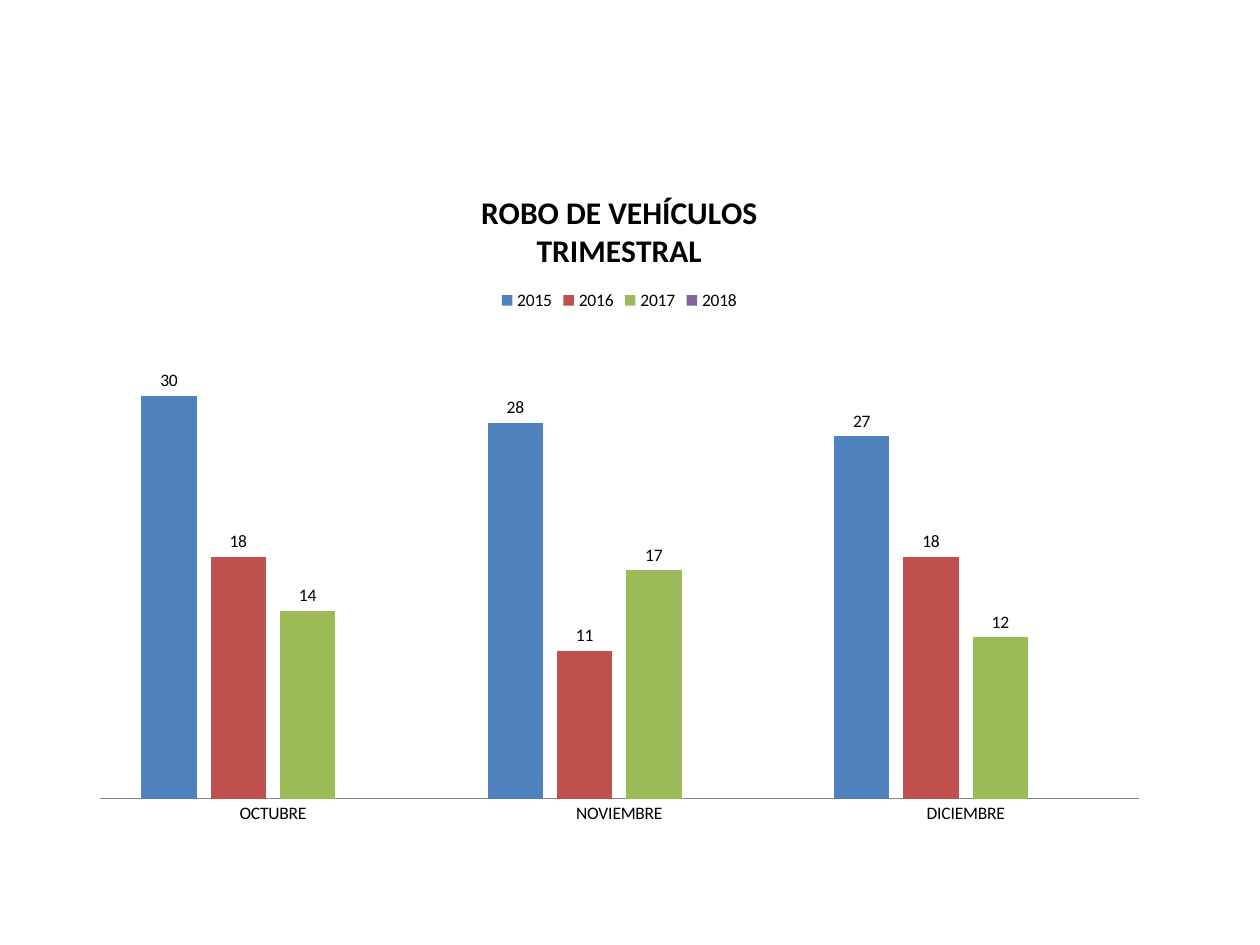
from pptx import Presentation
from pptx.chart.data import CategoryChartData
from pptx.dml.color import RGBColor
from pptx.enum.chart import XL_CHART_TYPE as ChartType, XL_LABEL_POSITION as LabelPosition
from pptx.enum.chart import XL_LEGEND_POSITION as LegendPosition, XL_TICK_MARK as TickMark
from pptx.util import Inches, Pt


def paint(color_format, color):
    color_format.rgb = RGBColor.from_string(color)


MONTHS = ["OCTUBRE", "NOVIEMBRE", "DICIEMBRE"]
THEFTS = {
    "2015": ([30, 28, 27], "4F81BD"),
    "2016": ([18, 11, 18], "C0504D"),
    "2017": ([14, 17, 12], "9BBB59"),
    "2018": ([None] * 3, "8064A2"),
}
TITLE = ["ROBO DE VEHÍCULOS", "TRIMESTRAL"]

deck = Presentation()
deck.slide_width, deck.slide_height = Inches(10), Inches(7.5)
page = deck.slides.add_slide(deck.slide_layouts[6])

data = CategoryChartData()
data.categories = MONTHS
for year, (values, _) in THEFTS.items():
    data.add_series(year, values)
chart = page.shapes.add_chart(
    ChartType.COLUMN_CLUSTERED,
    Inches(0.62), Inches(1.33), Inches(8.59), Inches(5.31), data,
).chart
chart.font.name = "Calibri"
chart.font.size = Pt(10)
paint(chart.font.color, "000000")

# Title and legend
chart.has_title = True
title = chart.chart_title.text_frame
title.text = "\n".join(TITLE)
for para in title.paragraphs:
    para.font.name = "Calibri"
    para.font.size = Pt(18)
    para.font.bold = True
    paint(para.font.color, "000000")
chart.chart_title.include_in_layout = False
chart.has_legend = True
chart.legend.position = LegendPosition.TOP
chart.legend.include_in_layout = False

# Axes
months = chart.category_axis
months.major_tick_mark = TickMark.NONE
months.format.line.width = Pt(0.75)
paint(months.format.line.color, "868686")
counts = chart.value_axis
counts.minimum_scale, counts.maximum_scale = 0, 35
counts.has_major_gridlines = False
counts.visible = False

# Columns
plot = chart.plots[0]
plot.gap_width = 150
plot.overlap = -25
plot.vary_by_categories = False
for series, (_, color) in zip(plot.series, THEFTS.values()):
    series.format.fill.solid()
    paint(series.format.fill.fore_color, color)
    series.data_labels.show_value = True
    series.data_labels.position = LabelPosition.OUTSIDE_END

deck.save("out.pptx")
